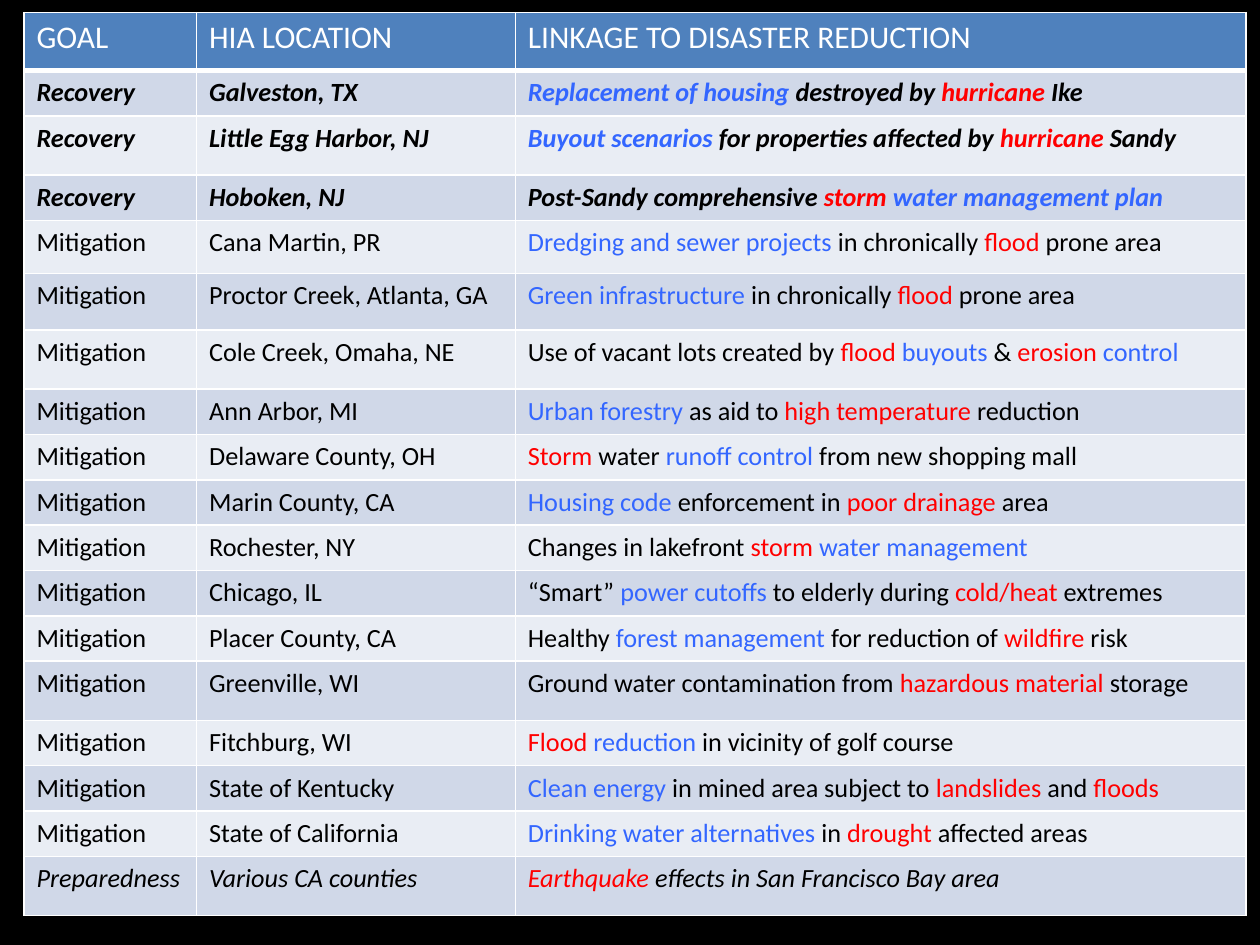
"""Build a slide with a table of HIA locations and their link to disaster reduction."""
from lxml import etree
from pptx import Presentation
from pptx.dml.color import RGBColor
from pptx.oxml.ns import qn
from pptx.util import Inches, Pt

COLORS = {"back": "000000", "head": "4F81BD", "odd": "D0D8E8", "even": "E9EDF4",
          "white": "FFFFFF", "black": "000000", "blue": "3366FF", "red": "FF0000"}
MARKS = {"~": "blue", "^": "red"}
WIDTHS = [1.37, 2.53, 5.8]
HEAD = ["GOAL", "HIA LOCATION", "LINKAGE TO DISASTER REDUCTION"]
ROWS = [
    (0.36, "Recovery", "Galveston, TX",
     "~Replacement of housing |destroyed by |^hurricane| Ike"),
    (0.47, "Recovery", "Little Egg Harbor, NJ",
     "~Buyout scenarios |for properties affected by |^hurricane| Sandy"),
    (0.36, "Recovery", "Hoboken, NJ",
     "Post-Sandy comprehensive |^storm |~water management plan"),
    (0.42, "Mitigation", "Cana Martin, PR",
     "~Dredging and sewer projects |in chronically |^flood| prone area"),
    (0.45, "Mitigation", "Proctor Creek, Atlanta, GA",
     "~Green infrastructure |in chronically |^flood| prone area"),
    (0.47, "Mitigation", "Cole Creek, Omaha, NE",
     "Use of vacant lots created by |^flood |~buyouts| & |^erosion |~control"),
    (0.36, "Mitigation", "Ann Arbor, MI",
     "~Urban forestry |as aid to |^high temperature |reduction"),
    (0.36, "Mitigation", "Delaware County, OH",
     "^Storm| water |~runoff control |from new shopping mall"),
    (0.36, "Mitigation", "Marin County, CA",
     "~Housing code |enforcement in |^poor drainage |area"),
    (0.36, "Mitigation", "Rochester, NY",
     "Changes in lakefront |^storm |~water management"),
    (0.36, "Mitigation", "Chicago, IL",
     "“Smart” |~power cutoffs |to elderly during |^cold/heat |extremes"),
    (0.36, "Mitigation", "Placer County, CA",
     "Healthy |~forest management |for reduction of |^wildfire |risk"),
    (0.47, "Mitigation", "Greenville, WI",
     "Ground water contamination from |^hazardous material |storage"),
    (0.36, "Mitigation", "Fitchburg, WI",
     "^Flood|~ reduction |in vicinity of golf course"),
    (0.36, "Mitigation", "State of Kentucky",
     "~Clean energy |in mined area subject to |^landslides| and |^floods"),
    (0.36, "Mitigation", "State of California",
     "~Drinking water alternatives |in |^drought| affected areas"),
    (0.47, "Preparedness", "Various CA counties",
     "^Earthquake| effects in San Francisco Bay area"),
]


def write(cell, text, size=15, color="black", bold=False, italic=False):
    para = cell.text_frame.paragraphs[0]
    for part in text.split("|"):
        run = para.add_run()
        run.text = part[1:] if part[0] in MARKS else part
        font = run.font
        font.name, font.size = "Calibri", Pt(size)
        font.bold, font.italic = bold, italic
        font.color.rgb = RGBColor.from_string(COLORS[MARKS.get(part[0], color)])


def paint(cell, fill, base=1):
    props = cell._tc.get_or_add_tcPr()
    for side, width in zip("LRTB", (1, 1, 1, base)):
        line = etree.SubElement(props, qn(f"a:ln{side}"), w=str(Pt(width)))
        solid = etree.SubElement(line, qn("a:solidFill"))
        etree.SubElement(solid, qn("a:srgbClr"), val=COLORS["white"])
    cell.fill.solid()
    cell.fill.fore_color.rgb = RGBColor.from_string(COLORS[fill])


prs = Presentation()
prs.slide_width, prs.slide_height = Inches(10), Inches(7.5)
slide = prs.slides.add_slide(prs.slide_layouts[6])
back = slide.background.fill
back.solid()
back.fore_color.rgb = RGBColor.from_string(COLORS["back"])

table = slide.shapes.add_table(len(ROWS) + 1, len(HEAD), Inches(0.19), Inches(0.1),
                               Inches(9.7), Inches(7.11)).table
for col, width in zip(table.columns, WIDTHS):
    col.width = Inches(width)

table.rows[0].height = Inches(0.46)
for c, title in enumerate(HEAD):
    write(table.cell(0, c), title, size=18, color="white")
    paint(table.cell(0, c), "head", base=3)

for r, (height, *texts) in enumerate(ROWS, 1):
    table.rows[r].height = Inches(height)
    goal = texts[0]
    for c, text in enumerate(texts):
        cell = table.cell(r, c)
        write(cell, text, bold=goal == "Recovery", italic=goal != "Mitigation")
        paint(cell, "odd" if r % 2 else "even")

prs.save("out.pptx")
